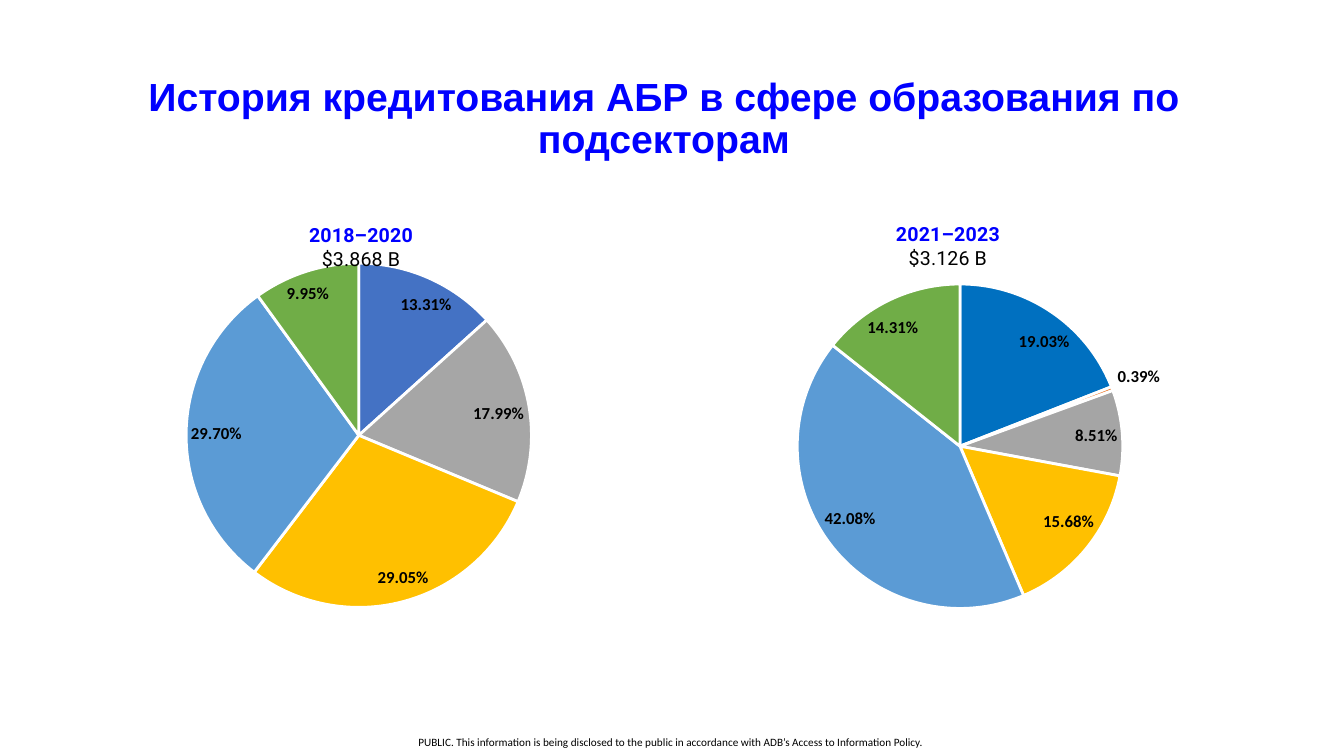
from dataclasses import dataclass
from typing import Any

from lxml import etree
from pptx import Presentation
from pptx import util as u
from pptx.chart.data import CategoryChartData
from pptx.dml.color import RGBColor
from pptx.enum import chart as ch, text
from pptx.oxml.ns import qn

WIDE, HIGH = u.Inches(13.33), u.Inches(7.5)
HUES = {
    "ink": "000000", "title": "0000FF", "edge": "FFFFFF", "navy": "4472C4",
    "blue": "0070C0", "rust": "ED7D31", "gray": "A6A6A6", "ash": "A5A5A5",
    "gold": "FFC000", "sky": "5B9BD5", "green": "70AD47",
}
FONTS = {
    "head": {"name": "Arial", "size": u.Pt(28), "bold": True},
    "foot": {"name": "Calibri", "size": u.Pt(8), "bold": False},
    "chart": {"name": "Calibri", "size": u.Pt(10)},
    "label": {"name": "Calibri", "size": u.Pt(12), "bold": True},
    "years": {"name": "Roboto", "size": u.Pt(14), "bold": True},
    "sum": {"name": "Roboto", "size": u.Pt(14), "bold": False},
}


@dataclass
class Box:
    left: float
    top: float
    width: float
    height: float

    def place(self) -> tuple[int, int, int, int]:
        return (int(WIDE * self.left / 100), int(HIGH * self.top / 100),
                int(WIDE * self.width / 100), int(HIGH * self.height / 100))


@dataclass
class Note:
    box: Box
    words: str
    font: str
    hue: str
    frame: dict[str, Any]
    para: dict[str, Any]


@dataclass
class Pie:
    box: Box
    years: str
    total: str
    title: dict[str, float]
    plot: dict[str, float]
    cuts: list[tuple[float, str]]


NOTES = [
    Note(Box(31.13, 97.33, 37.88, 1.73),
         "PUBLIC. This information is being disclosed to the public in accordance "
         "with ADB’s Access to Information Policy.", "foot", "ink",
         {"word_wrap": False, "margin_left": 0, "margin_top": 0,
          "margin_right": 0, "margin_bottom": 0}, {}),
    Note(Box(5.93, 9.6, 86.93, 75.6),
         "История кредитования АБР в сфере образования по подсекторам",
         "head", "title", {"word_wrap": True},
         {"alignment": text.PP_ALIGN.CENTER, "line_spacing": 0.9}),
]
PIES = [
    Pie(Box(7.05, 26.8, 39.3, 53.73), "2018–2020", "$3.868 B",
        {"x": 0.4, "y": 0.04}, {"x": 0.06, "y": 0.15, "w": 0.88, "h": 0.85},
        [(0.1331, "navy"), (0.1799, "gray"), (0.2905, "gold"),
         (0.297, "sky"), (0.0995, "green")]),
    Pie(Box(51.08, 25.47, 38.4, 55.2), "2021–2023", "$3.126 B",
        {"x": 0.4, "y": 0.06}, {"x": 0.06, "y": 0.22, "w": 0.94, "h": 0.78},
        [(0.1903, "blue"), (0.0039, "rust"), (0.0851, "ash"),
         (0.1568, "gold"), (0.4208, "sky"), (0.1431, "green")]),
]


def tint(hue: str) -> RGBColor:
    return RGBColor.from_string(HUES[hue])


def apply(item: Any, values: dict[str, Any]) -> None:
    for key, value in values.items():
        setattr(item, key, value)


def style(font: Any, kind: str, hue: str) -> None:
    apply(font, FONTS[kind])
    font.color.rgb = tint(hue)


def layout(node: Any, spot: int, shares: dict[str, float]) -> None:
    for old in node.findall(qn("c:layout")):
        node.remove(old)
    frame = etree.Element(qn("c:layout"))
    node.insert(spot, frame)
    hand = etree.SubElement(frame, qn("c:manualLayout"))
    modes = {"xMode": "edge", "yMode": "edge"}
    if "w" in shares:
        modes = {"layoutTarget": "inner", **modes}
    for key, value in {**modes, **shares}.items():
        etree.SubElement(hand, qn(f"c:{key}")).set("val", str(value))


def write(slide: Any, note: Note) -> None:
    frame = slide.shapes.add_textbox(*note.box.place()).text_frame
    apply(frame, note.frame)
    para = frame.paragraphs[0]
    apply(para, note.para)
    run = para.add_run()
    run.text = note.words
    style(run.font, note.font, note.hue)


def draw(slide: Any, pie: Pie) -> None:
    data = CategoryChartData(number_format="0.00%")
    data.categories = [str(i + 1) for i in range(len(pie.cuts))]
    data.add_series("Series 1", [value for value, _ in pie.cuts])
    chart = slide.shapes.add_chart(
        ch.XL_CHART_TYPE.PIE, *pie.box.place(), data).chart
    apply(chart, {"has_legend": False, "has_title": True})
    style(chart.font, "chart", "ink")

    title = chart.chart_title
    frame = title.text_frame
    lines = [(pie.years, "years", "title"), (pie.total, "sum", "ink")]
    for i, (words, kind, hue) in enumerate(lines):
        para = frame.add_paragraph() if i else frame.paragraphs[0]
        run = para.add_run()
        run.text = words
        style(run.font, kind, hue)
    layout(title._element, 1, pie.title)

    plot = chart.plots[0]
    apply(plot, {"vary_by_categories": True, "has_data_labels": True})
    layout(plot._element.getparent(), 0, pie.plot)
    labels = plot.data_labels
    apply(labels, {"show_value": True, "show_percentage": False,
                   "number_format": "0.00%", "number_format_is_linked": False,
                   "position": ch.XL_LABEL_POSITION.BEST_FIT})
    style(labels.font, "label", "ink")
    for i, (_, hue) in enumerate(pie.cuts):
        form = plot.series[0].points[i].format
        form.fill.solid()
        form.fill.fore_color.rgb = tint(hue)
        form.line.color.rgb = tint("edge")
        form.line.width = u.Pt(2)


def main() -> None:
    deck = Presentation()
    apply(deck, {"slide_width": WIDE, "slide_height": HIGH})
    slide = deck.slides.add_slide(deck.slide_layouts[6])
    for note in NOTES:
        write(slide, note)
    for pie in PIES:
        draw(slide, pie)
    deck.save("out.pptx")


if __name__ == "__main__":
    main()
